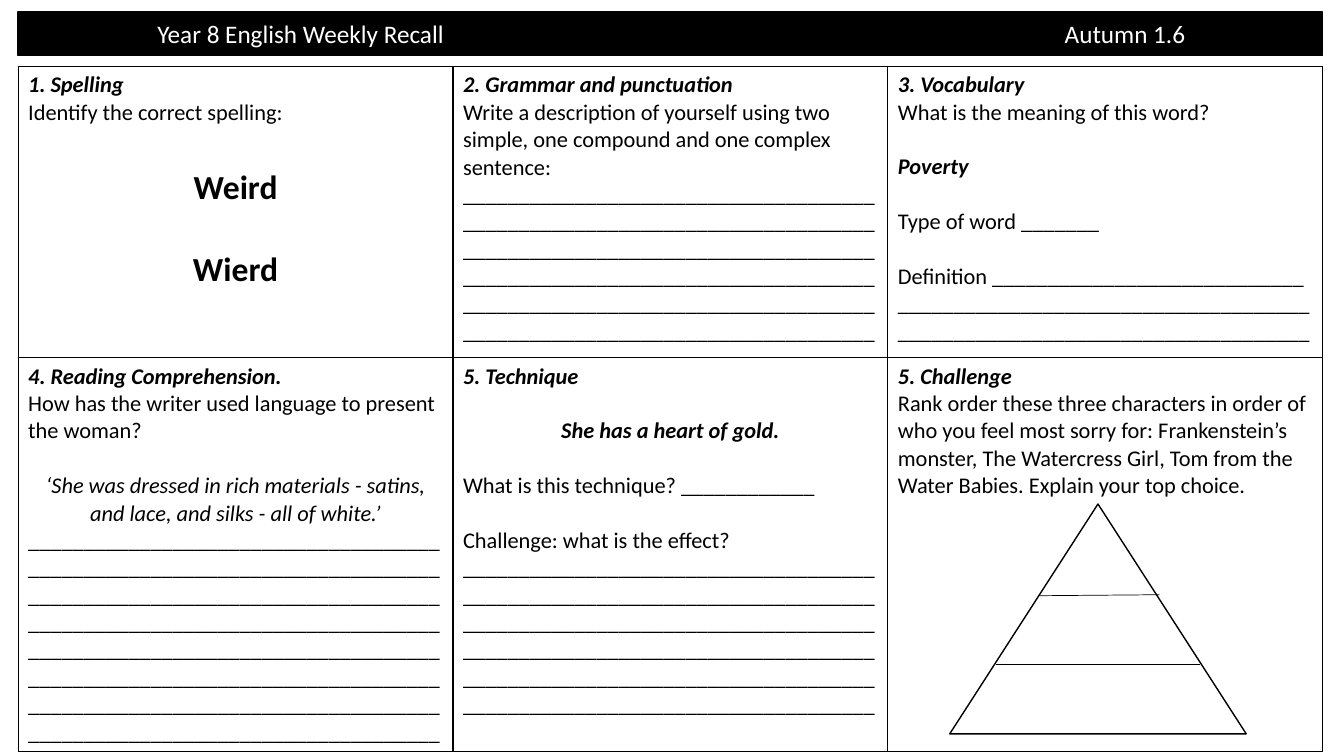
from dataclasses import dataclass

from lxml.etree import SubElement
from pptx import Presentation
from pptx.dml.color import RGBColor
from pptx.enum.shapes import MSO_CONNECTOR, MSO_SHAPE
from pptx.enum.text import MSO_ANCHOR, MSO_AUTO_SIZE, PP_ALIGN
from pptx.oxml import parse_xml
from pptx.oxml.ns import nsdecls, qn
from pptx.util import Emu, Pt

PX = 9144  # 100 px to the inch


def px(n):
    return Emu(n * PX)


@dataclass
class Theme:
    font: str = "Calibri"
    ink: str = "000000"
    paper: str = "FFFFFF"
    title: int = 18
    body: int = 16
    word: int = 24
    line: float = 1
    thin: float = 0.5


class Worksheet:
    def __init__(self, prs, theme):
        self.t = theme
        self.s = prs.slides.add_slide(prs.slide_layouts[5])
        # Kind of paragraph: alignment, then font values
        self.styles = {
            "title": (PP_ALIGN.LEFT, dict(size=theme.title)),
            "head": (PP_ALIGN.LEFT, dict(size=theme.body, bold=True, italic=True)),
            "text": (PP_ALIGN.LEFT, dict(size=theme.body)),
            "word": (PP_ALIGN.CENTER, dict(size=theme.word, bold=True)),
            "quote": (PP_ALIGN.CENTER, dict(size=theme.body, italic=True)),
            "phrase": (PP_ALIGN.CENTER, dict(size=theme.body, bold=True, italic=True)),
        }

    def paint(self, sp, fill):
        sp.fill.solid()
        sp.fill.fore_color.rgb = RGBColor.from_string(fill)
        self.stroke(sp, self.t.line)
        sp.shadow.inherit = False

    def stroke(self, sp, width):
        sp.line.color.rgb = RGBColor.from_string(self.t.ink)
        sp.line.width = Pt(width)

    def para(self, p, text, style, color, gap=0):
        p.alignment, values = self.styles[style]
        p.space_before = Pt(gap)
        r = p.add_run()
        r.text = text
        font = dict(name=self.t.font, bold=False, italic=False) | values
        font["size"] = Pt(font["size"])
        for key, value in font.items():
            setattr(r.font, key, value)
        r.font.color.rgb = RGBColor.from_string(color)

    def banner(self, left, right, box, inset, tab):
        sp = self.s.shapes.title
        sp.left, sp.top, sp.width, sp.height = map(px, box)
        self.paint(sp, self.t.ink)
        tf = sp.text_frame
        frame = dict(auto_size=MSO_AUTO_SIZE.NONE, vertical_anchor=MSO_ANCHOR.MIDDLE,
                     margin_left=px(inset), margin_top=0, margin_bottom=0)
        for key, value in frame.items():
            setattr(tf, key, value)
        p = tf.paragraphs[0]
        self.para(p, f"{left}\t{right}", "title", self.t.paper)
        stops = SubElement(p._p.get_or_add_pPr(), qn("a:tabLst"))
        SubElement(stops, qn("a:tab"), pos=str(px(tab)), algn="l")

    def grid(self, rows, box, heights):
        frame = self.s.shapes.add_table(len(rows), len(rows[0]), *map(px, box))
        table = frame.table
        table.first_row = table.horz_banding = False
        for row, height, tasks in zip(table.rows, heights, rows):
            row.height = px(height)
            for cell, task in zip(row.cells, tasks):
                self.cell(cell, task)

    def cell(self, cell, task):
        tcPr = cell._tc.get_or_add_tcPr()
        for side in "LRTB":
            tcPr.append(parse_xml(
                f'<a:ln{side} {nsdecls("a")} w="{Pt(self.t.line)}"><a:solidFill>'
                f'<a:srgbClr val="{self.t.ink}"/></a:solidFill></a:ln{side}>'))
        cell.fill.solid()
        cell.fill.fore_color.rgb = RGBColor.from_string(self.t.paper)
        tf = cell.text_frame
        for i, (style, text, *gap) in enumerate(task):
            p = tf.add_paragraph() if i else tf.paragraphs[0]
            self.para(p, text, style, self.t.ink, *gap)

    def triangle(self, box):
        sp = self.s.shapes.add_shape(MSO_SHAPE.ISOSCELES_TRIANGLE, *map(px, box))
        self.paint(sp, self.t.paper)

    def rule(self, *ends):
        sp = self.s.shapes.add_connector(MSO_CONNECTOR.STRAIGHT, *map(px, ends))
        self.stroke(sp, self.t.thin)
        SubElement(sp._element.spPr, qn("a:effectLst"))


def blanks(lines):
    """Answer lines that each fill a column."""
    return "_" * 37 * lines


GAP = 19.5  # one line of body text, in points
WORD_GAP = 29.3  # one line of spelling words

TASKS = [
    [
        [("head", "1. Spelling"),
         ("text", "Identify the correct spelling:"),
         ("word", "Weird", WORD_GAP),
         ("word", "Wierd", WORD_GAP)],
        [("head", "2. Grammar and punctuation"),
         ("text", "Write a description of yourself using two simple, "
                  "one compound and one complex sentence:"),
         ("text", blanks(6))],
        [("head", "3. Vocabulary"),
         ("text", "What is the meaning of this word?"),
         ("head", "Poverty", GAP),
         ("text", "Type of word " + "_" * 7, GAP),
         ("text", "Definition " + "_" * 28 + " " + blanks(2), GAP)],
    ],
    [
        [("head", "4. Reading Comprehension."),
         ("text", "How has the writer used language to present the woman?"),
         ("quote", "‘She was dressed in rich materials - satins, "
                   "and lace, and silks - all of white.’", GAP),
         ("text", blanks(8))],
        [("head", "5. Technique"),
         ("phrase", "She has a heart of gold.", GAP),
         ("text", "What is this technique? " + "_" * 12, GAP),
         ("text", "Challenge: what is the effect? " + blanks(6), GAP)],
        [("head", "5. Challenge"),
         ("text", "Rank order these three characters in order of who you feel "
                  "most sorry for: Frankenstein’s monster, The Watercress Girl, "
                  "Tom from the Water Babies. Explain your top choice.")],
    ],
]


def main():
    prs = Presentation()
    prs.slide_width, prs.slide_height = px(1333), px(750)
    sheet = Worksheet(prs, Theme())

    # Title bar
    sheet.banner("Year 8 English Weekly Recall", "Autumn 1.6",
                 (18, 12, 1294, 43), inset=138, tab=900)

    # Six tasks
    sheet.grid(TASKS, (18, 66, 1294, 679), (289, 390))

    # Ranking pyramid
    sheet.triangle((942, 500, 294, 228))
    sheet.rule(1031, 591, 1150, 590)
    sheet.rule(988, 659, 1190, 659)

    prs.save("out.pptx")


if __name__ == "__main__":
    main()
